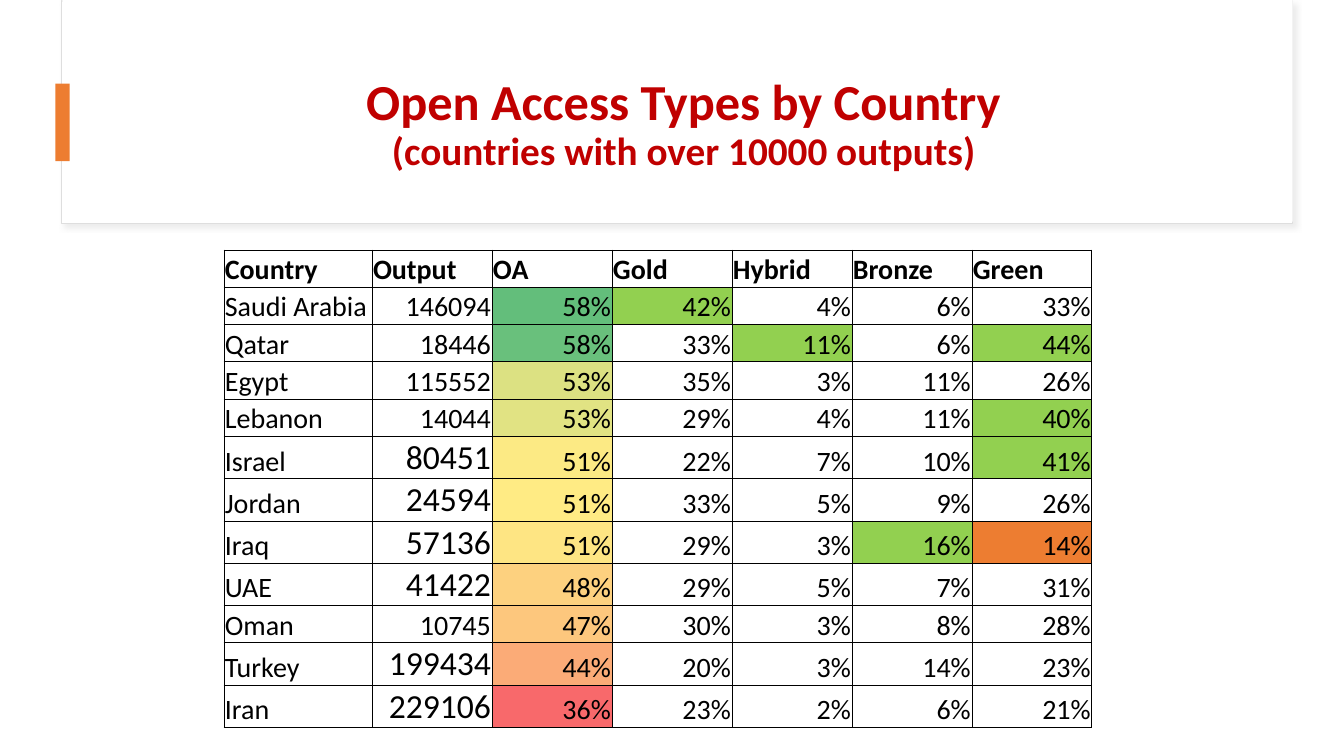
from lxml import etree
from pptx import Presentation
from pptx.dml.color import RGBColor
from pptx.enum.shapes import MSO_SHAPE
from pptx.enum.text import MSO_ANCHOR, PP_ALIGN
from pptx.oxml.ns import qn
from pptx.util import Inches, Pt

RECTANGLE = MSO_SHAPE.RECTANGLE
MIDDLE, BOTTOM = MSO_ANCHOR.MIDDLE, MSO_ANCHOR.BOTTOM
LEFT, CENTER, RIGHT = PP_ALIGN.LEFT, PP_ALIGN.CENTER, PP_ALIGN.RIGHT

FONT = "Calibri"
WHITE, BLACK, RED = "FFFFFF", "000000", "C00000"
GREEN, ORANGE = "92D050", "ED7D31"
CELL_FORMAT = {"margin_left": Inches(0.01), "margin_right": Inches(0.01),
               "margin_top": Inches(0.01), "margin_bottom": 0,
               "vertical_anchor": BOTTOM}

HEADERS = ["Country", "Output", "OA", "Gold", "Hybrid", "Bronze", "Green"]
# Country, output, output text size, OA colour, then the five percentages
COUNTRIES = [
    ("Saudi Arabia", 146094, 20, "63BE7B", (58, 42, 4, 6, 33)),
    ("Qatar", 18446, 20, "69C07C", (58, 33, 11, 6, 44)),
    ("Egypt", 115552, 20, "DCE182", (53, 35, 3, 11, 26)),
    ("Lebanon", 14044, 20, "E1E383", (53, 29, 4, 11, 40)),
    ("Israel", 80451, 24, "FCEA84", (51, 22, 7, 10, 41)),
    ("Jordan", 24594, 24, "FFEB84", (51, 33, 5, 9, 26)),
    ("Iraq", 57136, 24, "FEE583", (51, 29, 3, 16, 14)),
    ("UAE", 41422, 24, "FDD17F", (48, 29, 5, 7, 31)),
    ("Oman", 10745, 20, "FDC77D", (47, 30, 3, 8, 28)),
    ("Turkey", 199434, 24, "FBAB77", (44, 20, 3, 14, 23)),
    ("Iran", 229106, 24, "F8696B", (36, 23, 2, 6, 21)),
]
HIGHLIGHTS = {
    ("Saudi Arabia", "Gold"): GREEN, ("Qatar", "Hybrid"): GREEN,
    ("Qatar", "Green"): GREEN, ("Lebanon", "Green"): GREEN,
    ("Israel", "Green"): GREEN, ("Iraq", "Bronze"): GREEN,
    ("Iraq", "Green"): ORANGE,
}


def rgb(color):
    return RGBColor.from_string(color)


def apply_format(target, values):
    for name, value in values.items():
        setattr(target, name, value)


def add_span(para, text, size, color=BLACK, bold=False):
    span = para.add_run()
    span.text = text
    apply_format(span.font, {"name": FONT, "size": Pt(size), "bold": bold})
    span.font.color.rgb = rgb(color)


def add_box(page, left, top, width, height, fill, line=None):
    box = page.shapes.add_shape(RECTANGLE, Inches(left), Inches(top),
                                Inches(width), Inches(height))
    box.shadow.inherit = False
    box.fill.solid()
    box.fill.fore_color.rgb = rgb(fill)
    if line:
        box.line.color.rgb = rgb(line)
        box.line.width = Pt(0.75)
    else:
        box.line.fill.background()
    return box


def add_soft_shadow(box):
    effects = box.element.spPr.find(qn("a:effectLst"))
    shadow = etree.SubElement(effects, qn("a:outerShdw"), blurRad=str(Pt(4)),
                              dist=str(Pt(3)), dir=str(45 * 60000))
    color = etree.SubElement(shadow, qn("a:srgbClr"), val="D9D9D9")
    etree.SubElement(color, qn("a:alpha"), val="50000")


def add_title(page):
    box = page.shapes.add_textbox(Inches(1.22), Inches(0.6),
                                  Inches(11.12), Inches(1.29))
    apply_format(box.text_frame, {"word_wrap": True, "vertical_anchor": MIDDLE})
    para = box.text_frame.paragraphs[0]
    apply_format(para, {"alignment": CENTER, "line_spacing": 0.9})
    add_span(para, "Open Access Types by Country", 36, RED, True)
    para.add_line_break()
    add_span(para, "(countries with over 10000 outputs)", 28, RED, True)


def add_borders(cell):
    properties = cell._tc.get_or_add_tcPr()
    for index, side in enumerate(("a:lnL", "a:lnR", "a:lnT", "a:lnB")):
        line = etree.Element(qn(side), w=str(Pt(0.5)))
        fill = etree.SubElement(line, qn("a:solidFill"))
        etree.SubElement(fill, qn("a:srgbClr"), val=BLACK)
        properties.insert(index, line)


def fill_cell(cell, text, align=LEFT, size=20, bold=False, fill=None):
    apply_format(cell, CELL_FORMAT)
    para = cell.text_frame.paragraphs[0]
    para.alignment = align
    add_span(para, text, size, bold=bold)
    if fill:
        cell.fill.solid()
        cell.fill.fore_color.rgb = rgb(fill)
    else:
        cell.fill.background()
    add_borders(cell)


def add_country_table(page):
    frame = page.shapes.add_table(len(COUNTRIES) + 1, len(HEADERS), Inches(2.22),
                                  Inches(2.48), Inches(8.58), Inches(4.73))
    table = frame.table
    apply_format(table, {"first_row": False, "horz_banding": False})
    for index, column in enumerate(table.columns):
        column.width = Inches(1.19 if index else 1.47)

    # Header row
    table.rows[0].height = Inches(0.37)
    for index, header in enumerate(HEADERS):
        fill_cell(table.cell(0, index), header, bold=True)

    # One row per country, taller where the output is set larger
    for row, (country, output, size, oa_color, shares) in enumerate(COUNTRIES, 1):
        table.rows[row].height = Inches(0.42 if size > 20 else 0.37)
        fill_cell(table.cell(row, 0), country)
        fill_cell(table.cell(row, 1), str(output), RIGHT, size)
        for column, share in enumerate(shares, 2):
            header = HEADERS[column]
            fill = oa_color if header == "OA" else HIGHLIGHTS.get((country, header))
            fill_cell(table.cell(row, column), f"{share}%", RIGHT, fill=fill)


def main():
    deck = Presentation()
    deck.slide_width, deck.slide_height = Inches(13.33), Inches(7.5)
    page = deck.slides.add_slide(deck.slide_layouts[6])

    # Title panel with its accent bar
    add_soft_shadow(add_box(page, 0.61, 0.01, 12.21, 2.21, WHITE, "DEDEDE"))
    add_box(page, 0.62, 0, 12.2, 2.2, WHITE)
    add_title(page)
    add_box(page, 0.55, 0.83, 0.14, 0.77, ORANGE)

    add_country_table(page)
    deck.save("out.pptx")


if __name__ == "__main__":
    main()
